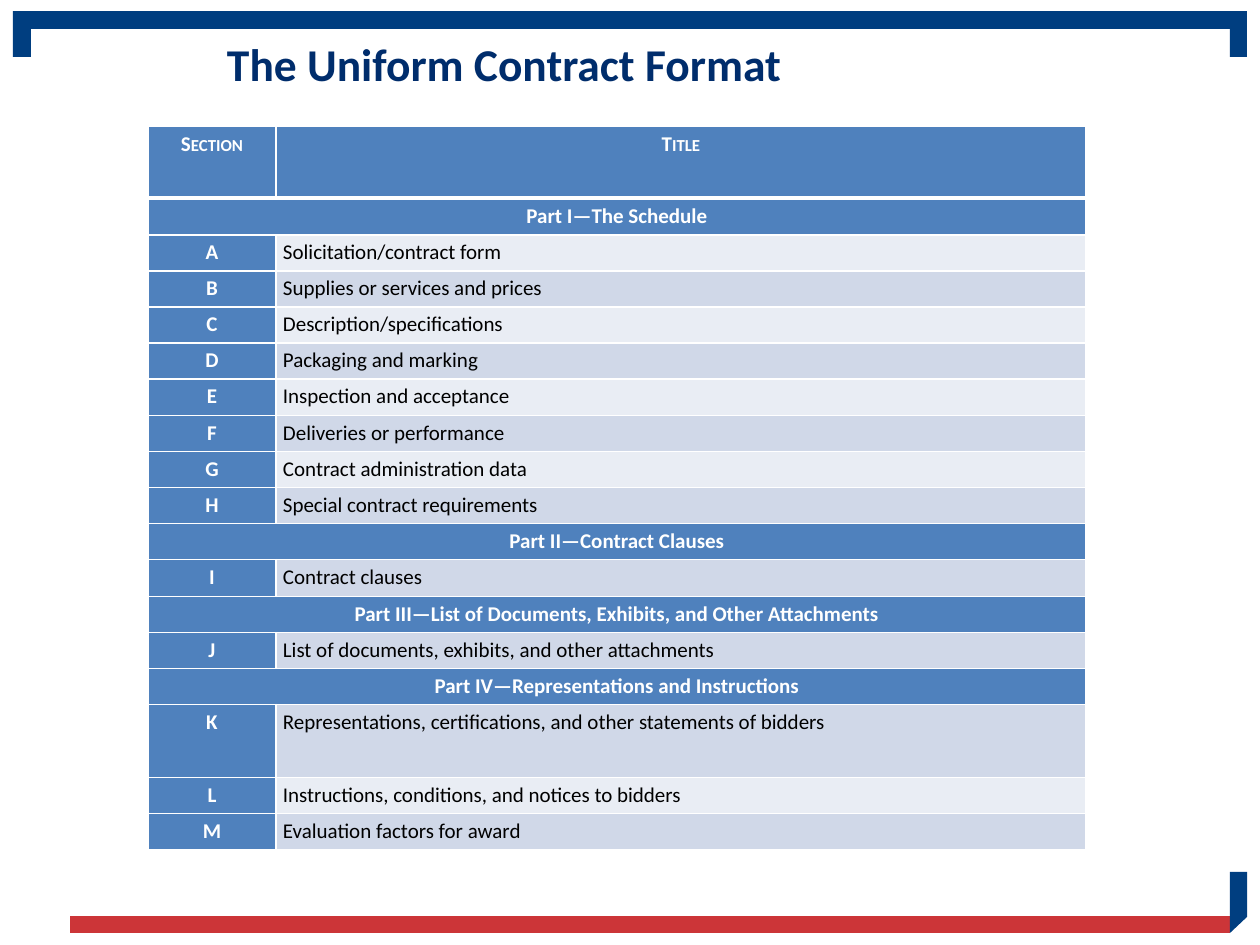
from lxml.etree import SubElement
from pptx import Presentation
from pptx.dml.color import RGBColor
from pptx.enum.text import MSO_ANCHOR as Anchor, PP_ALIGN as Align
from pptx.oxml.ns import qn
from pptx.util import Inches, Pt

PX = 7257
NAVY, RED, BLUE, WHITE = "003E80", "CC3538", "4F81BD", "FFFFFF"
STRIPES = ["E9EDF4", "D0D8E8"]
rgb = RGBColor.from_string


def write(holder, text, size=12, color=WHITE, bold=True, align=Align.CENTER,
          spacing=1.2, inset=7, small_caps=False):
    holder.margin_left = holder.margin_right = inset * PX
    holder.margin_top = holder.margin_bottom = 0
    frame = getattr(holder, "text_frame", holder)
    frame.word_wrap = True
    paragraph = frame.paragraphs[0]
    paragraph.alignment = align
    paragraph.line_spacing = spacing
    run = paragraph.add_run()
    run.text = text
    run.font.name = "Calibri"
    run.font.size = Pt(size)
    run.font.bold = bold
    run.font.color.rgb = rgb(color)
    if small_caps:
        run.font._element.set("cap", "small")


def fill_cell(cell, color, bottom=1):
    properties = cell._tc.get_or_add_tcPr()
    for side, width in [("lnL", 1), ("lnR", 1), ("lnT", 1), ("lnB", bottom)]:
        line = SubElement(properties, qn(f"a:{side}"), w=str(Pt(width)))
        SubElement(SubElement(line, qn("a:solidFill")), qn("a:srgbClr"), val=WHITE)
    cell.fill.solid()
    cell.fill.fore_color.rgb = rgb(color)


deck = Presentation()
deck.slide_width, deck.slide_height = Inches(10), Inches(7.5)
slide = deck.slides.add_slide(deck.slide_layouts[5])

frame_parts = [
    (NAVY, [[(1230, 11), (13, 11), (13, 57), (31, 57), (31, 29), (1230, 29)],
            [(1247, 11), (1230, 11), (1230, 57), (1247, 57)]]),
    (RED, [[(1230, 916), (70, 916), (70, 933), (1230, 933)]]),
    (NAVY, [[(1247, 872), (1230, 872), (1230, 933), (1247, 917)]]),
]
for color, outlines in frame_parts:
    builder = slide.shapes.build_freeform(*outlines[0][0], scale=PX)
    for outline in outlines:
        builder.move_to(*outline[0])
        builder.add_line_segments(outline[1:], close=True)
    part = builder.convert_to_shape()
    part.shadow.inherit = False
    part.fill.solid()
    part.fill.fore_color.rgb = rgb(color)
    part.line.fill.background()

heading = slide.shapes.title
heading.left, heading.top = 227 * PX, 36 * PX
heading.width, heading.height = 806 * PX, 55 * PX
heading.text_frame.vertical_anchor = Anchor.TOP
write(heading.text_frame, "The Uniform Contract Format", size=26, color="002D6C",
      align=Align.LEFT, spacing=1.0, inset=0)

sections = [
    ("Section", "Title"),
    ("Part I—The Schedule", None),
    ("A", "Solicitation/contract form"),
    ("B", "Supplies or services and prices"),
    ("C", "Description/specifications"),
    ("D", "Packaging and marking"),
    ("E", "Inspection and acceptance"),
    ("F", "Deliveries or performance"),
    ("G", "Contract administration data"),
    ("H", "Special contract requirements"),
    ("Part II—Contract Clauses", None),
    ("I", "Contract clauses"),
    ("Part III—List of Documents, Exhibits, and Other Attachments", None),
    ("J", "List of documents, exhibits, and other attachments"),
    ("Part IV—Representations and Instructions", None),
    ("K", "Representations, certifications, and other statements of bidders"),
    ("L", "Instructions, conditions, and notices to bidders"),
    ("M", "Evaluation factors for award"),
]
TABLE_HEIGHT = 724
DOUBLE_ROWS = ("Section", "K")
units = len(sections) + len(DOUBLE_ROWS)

contract = slide.shapes.add_table(len(sections), 2, 148 * PX, 126 * PX,
                                  938 * PX, TABLE_HEIGHT * PX).table
contract.columns[0].width = 128 * PX
contract.columns[1].width = 810 * PX

start = 0
for row, (section, title) in enumerate(sections):
    end = start + (2 if section in DOUBLE_ROWS else 1)
    height = round(TABLE_HEIGHT * end / units) - round(TABLE_HEIGHT * start / units)
    contract.rows[row].height = height * PX
    start = end

    is_header = row == 0
    bottom = 3 if is_header else 1
    section_cell, title_cell = contract.cell(row, 0), contract.cell(row, 1)
    if title is None:
        section_cell.merge(title_cell)
    fill_cell(section_cell, BLUE, bottom)
    write(section_cell, section, small_caps=is_header)
    if is_header:
        fill_cell(title_cell, BLUE, bottom)
        write(title_cell, title, small_caps=True)
    elif title is None:
        fill_cell(title_cell, BLUE)
        title_cell.margin_top = title_cell.margin_bottom = 0
        title_cell.text_frame.paragraphs[0].font.size = Pt(12)
    else:
        fill_cell(title_cell, STRIPES[row % 2])
        write(title_cell, title, color="000000", bold=False, align=Align.LEFT)

deck.save("out.pptx")
